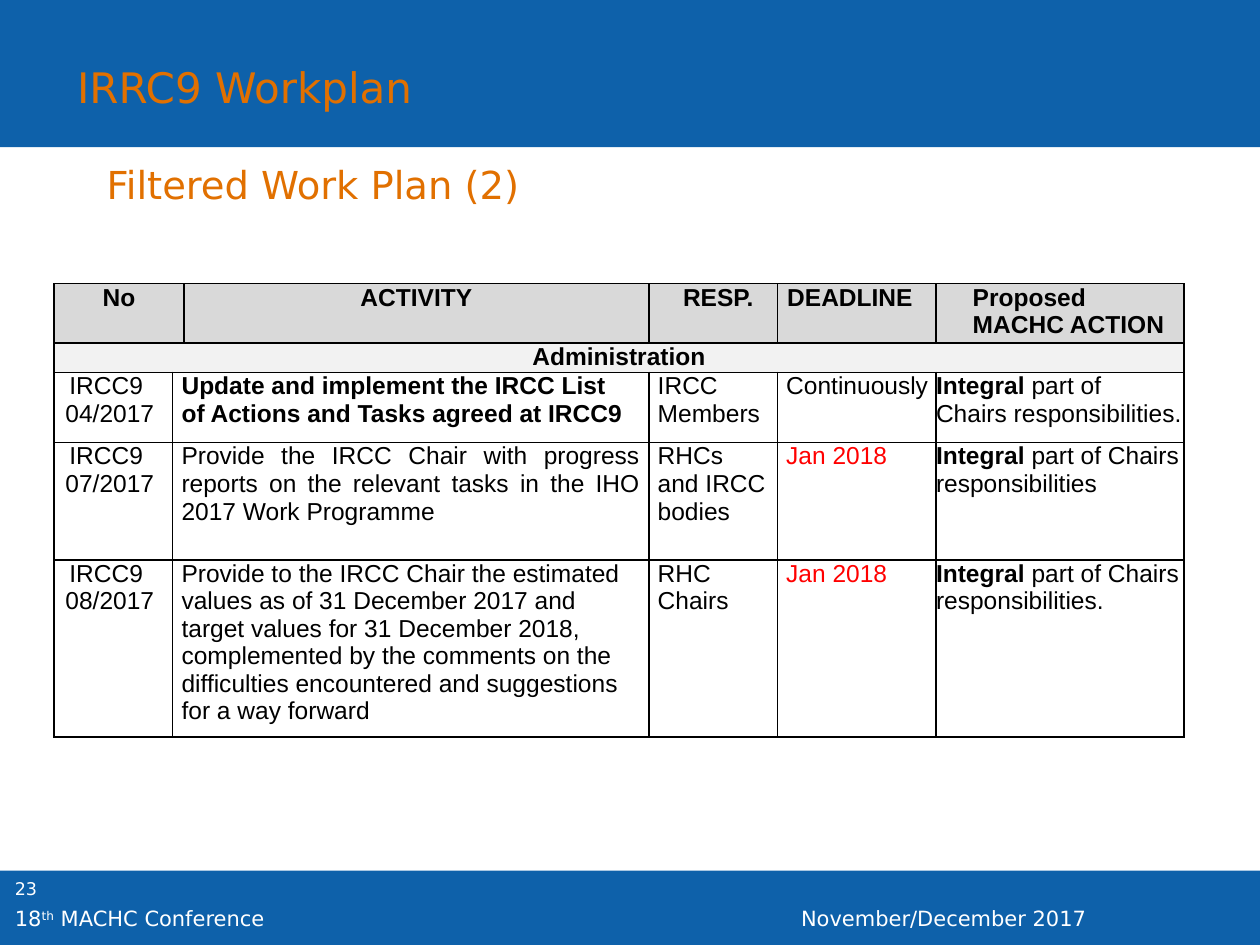
from lxml import etree
from pptx import Presentation
from pptx import util as u
from pptx.dml.color import RGBColor
from pptx.enum import shapes, text
from pptx.oxml.ns import qn

COLORS = {"blue": "0E61AA", "orange": "E17000", "white": "FFFFFF", "black": "000000",
          "red": "FF0000", "header": "D9D9D9", "section": "F2F2F2"}
HEADING_FONT, TABLE_FONT = "DejaVu Sans", "Arial"
CENTER, JUSTIFY = text.PP_ALIGN.CENTER, text.PP_ALIGN.JUSTIFY

COLUMN_WIDTHS = [2.39, 0.23, 9.37, 2.59, 3.2, 5.0]
ROW_HEIGHTS = [1.19, 0.59, 1.42, 2.36, 3.57]
HEADERS = [(0, "No", 0), (2, "ACTIVITY", 0), (3, "RESP.", 0.69),
           (4, "DEADLINE", 0.2), (5, "Proposed MACHC ACTION", 0.74)]
# Number, activity, responsible (one paragraph each), deadline, rest of the action
ACTIVITIES = [
    ("IRCC9 04/2017",
     "Update and implement the IRCC List\nof Actions and Tasks agreed at IRCC9",
     ["IRCC", "Members"], "Continuously", " part of\nChairs responsibilities."),
    ("IRCC9 07/2017",
     "Provide the IRCC Chair with progress reports on the relevant tasks "
     "in the IHO 2017 Work Programme",
     ["RHCs and IRCC bodies"], "Jan 2018", " part of Chairs responsibilities"),
    ("IRCC9 08/2017",
     "Provide to the IRCC Chair the estimated values as of 31 December 2017 and "
     "target values for 31 December 2018, complemented by the comments on the "
     "difficulties encountered and suggestions for a way forward",
     ["RHC Chairs"], "Jan 2018", " part of Chairs responsibilities."),
]


def color(name):
    return RGBColor.from_string(COLORS[name])


def add_run(paragraph, content, size, font, color_name, bold=False, baseline=None):
    for index, line in enumerate(content.split("\n")):
        if index:
            paragraph.add_line_break()
        run = paragraph.add_run()
        run.text = line
        run.font.size, run.font.name, run.font.bold = u.Pt(size), font, bold
        run.font.color.rgb = color(color_name)
        if baseline:
            run.font._element.set("baseline", str(baseline * 1000))


def add_band(slide, top, height):
    band = slide.shapes.add_shape(shapes.MSO_SHAPE.RECTANGLE, 0, u.Cm(top),
                                  u.Cm(25.4), u.Cm(height))
    band.shadow.inherit = False
    band.fill.solid()
    band.fill.fore_color.rgb = color("blue")
    band.line.fill.background()


def fill_text(shape, box, runs, size, color_name, wrap=True):
    """Place a text shape and write (text, baseline) runs in it."""
    shape.left, shape.top, shape.width, shape.height = map(u.Cm, box)
    frame = shape.text_frame
    frame.word_wrap = wrap
    frame.auto_size = text.MSO_AUTO_SIZE.NONE if wrap else text.MSO_AUTO_SIZE.SHAPE_TO_FIT_TEXT
    frame.vertical_anchor = text.MSO_ANCHOR.TOP
    paragraph = frame.paragraphs[0]
    paragraph.alignment = text.PP_ALIGN.LEFT
    for content, baseline in runs:
        add_run(paragraph, content, size, HEADING_FONT, color_name, baseline=baseline)


def add_label(slide, *args, **options):
    fill_text(slide.shapes.add_textbox(0, 0, 0, 0), *args, **options)


def style_cell(cell, fill_name=None):
    cell.margin_left = cell.margin_right = cell.margin_top = cell.margin_bottom = 0
    properties = cell._tc.get_or_add_tcPr()
    for side in ("lnL", "lnR", "lnT", "lnB"):
        border = etree.SubElement(properties, qn("a:" + side), w=str(u.Pt(1)))
        solid = etree.SubElement(border, qn("a:solidFill"))
        etree.SubElement(solid, qn("a:srgbClr"), val=COLORS["black"])
    if fill_name:
        cell.fill.solid()
        cell.fill.fore_color.rgb = color(fill_name)
    else:
        cell.fill.background()


def write_cell(cell, paragraphs, align=text.PP_ALIGN.LEFT, left=0, right=0, first=0):
    """Write paragraphs, each a list of (text, bold, colour) runs."""
    for index, runs in enumerate(paragraphs):
        frame = cell.text_frame
        paragraph = frame.add_paragraph() if index else frame.paragraphs[0]
        paragraph.alignment = align
        properties = paragraph._p.get_or_add_pPr()
        for name, value in (("marL", left), ("marR", right), ("indent", first)):
            properties.set(name, str(u.Cm(value)))
        for content, bold, color_name in runs:
            add_run(paragraph, content, 14, TABLE_FONT, color_name, bold)


def add_work_plan(slide):
    frame = slide.shapes.add_table(len(ROW_HEIGHTS), len(COLUMN_WIDTHS), u.Cm(1.09), u.Cm(5.72),
                                   u.Cm(sum(COLUMN_WIDTHS)), u.Cm(sum(ROW_HEIGHTS)))
    table = frame.table
    table.first_row = table.horz_banding = False
    for column, width in zip(table.columns, COLUMN_WIDTHS):
        column.width = u.Cm(width)
    for index, (row, height) in enumerate(zip(table.rows, ROW_HEIGHTS)):
        row.height = u.Cm(height)
        for cell in row.cells:
            style_cell(cell, {0: "header", 1: "section"}.get(index))

    # Header and section rows
    table.cell(0, 0).merge(table.cell(0, 1))
    table.cell(1, 0).merge(table.cell(1, 5))
    for column, label, left in HEADERS:
        align = text.PP_ALIGN.LEFT if left else CENTER
        write_cell(table.cell(0, column), [[(label, True, "black")]], align, left)
    write_cell(table.cell(1, 0), [[("Administration", True, "black")]], CENTER)

    # Activity rows
    for row, (number, activity, responsible, deadline, action) in enumerate(ACTIVITIES, 2):
        table.cell(row, 1).merge(table.cell(row, 2))
        write_cell(table.cell(row, 0), [[(number, False, "black")]], left=0.23, first=0.08)
        write_cell(table.cell(row, 1), [[(activity, row == 2, "black")]],
                   JUSTIFY if row == 3 else text.PP_ALIGN.LEFT, 0.18, 0.18)
        write_cell(table.cell(row, 3), [[(line, False, "black")] for line in responsible],
                   left=0.18, right=0.18)
        deadline_color = "red" if deadline.startswith("Jan") else "black"
        write_cell(table.cell(row, 4), [[(deadline, False, deadline_color)]], left=0.18)
        write_cell(table.cell(row, 5), [[("Integral", True, "black"), (action, False, "black")]])


def main():
    presentation = Presentation()
    presentation.slide_width, presentation.slide_height = u.Cm(25.4), u.Cm(19.05)
    slide = presentation.slides.add_slide(presentation.slide_layouts[5])
    title = slide.shapes.title

    # Bands, with the title brought in front of them
    add_band(slide, 17.55, 1.5)
    add_band(slide, 0, 2.97)
    slide.shapes._spTree.append(title._element)

    # Headings
    fill_text(title, (1.3, 1.12, 7.54, 1.27), [("IRRC9 Workplan", None)], 24, "orange", wrap=False)
    add_label(slide, (1.9, 3.12, 9.17, 1.19), [("Filtered Work Plan (2)", None)], 22, "orange",
              wrap=False)

    add_work_plan(slide)

    # Footer
    add_label(slide, (0.05, 17.58, 1.98, 1.02), [("23", None)], 10, "white")
    add_label(slide, (0.05, 18.14, 11.13, 0.61),
              [("18", None), ("th", 30), (" MACHC Conference", None)], 12, "white")
    add_label(slide, (15.9, 18.14, 9.5, 0.61), [("November/December 2017", None)], 12, "white")

    presentation.save("out.pptx")


if __name__ == "__main__":
    main()
